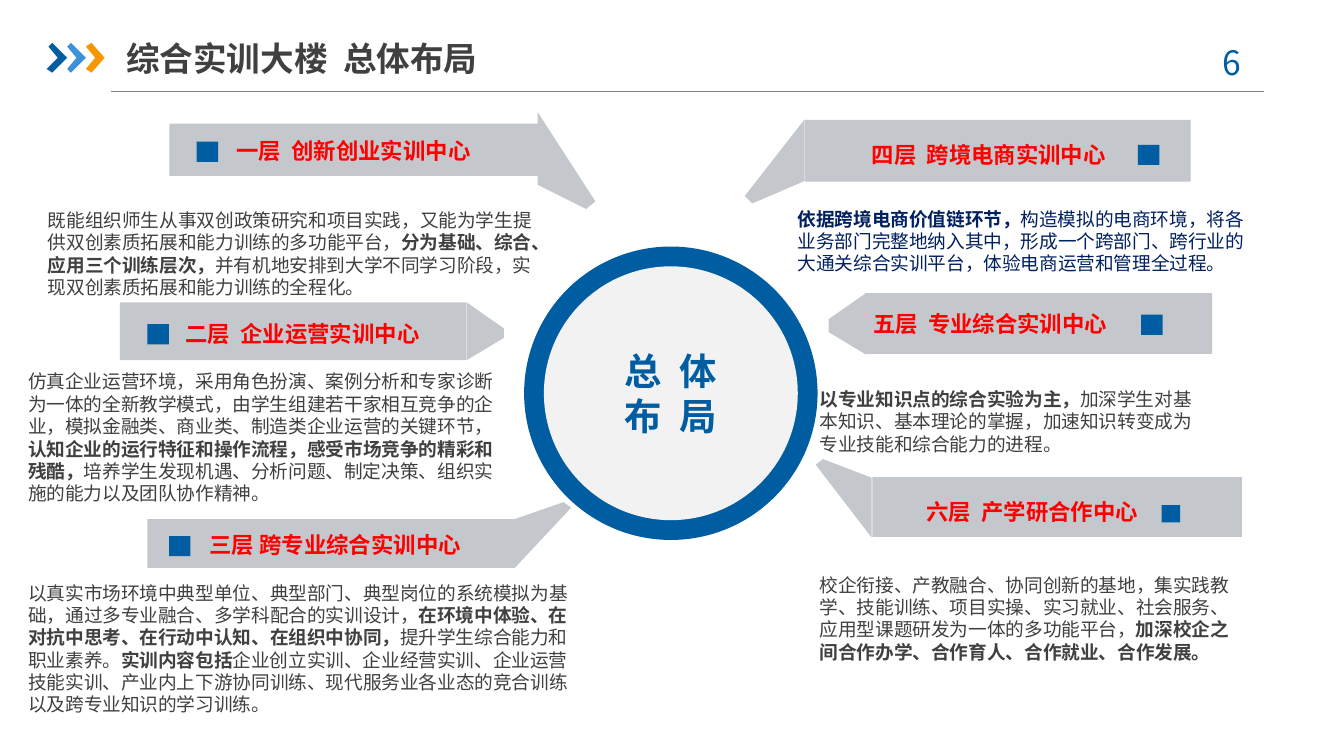
from lxml.etree import SubElement
from pptx import Presentation
from pptx.dml.color import RGBColor
from pptx.enum.shapes import MSO_CONNECTOR, MSO_SHAPE
from pptx.enum.text import MSO_ANCHOR, MSO_AUTO_SIZE, PP_ALIGN
from pptx.oxml.ns import qn
from pptx.util import Pt

FONT = "Noto Sans CJK SC"
COLORS = {
    "blue": "005DA2", "sky": "3992DB", "orange": "F79600", "rule": "808080",
    "banner": "C4C7CB", "disc": "F2F2F2", "text": "404040", "navy": "002060",
    "red": "FF0000",
}

LEFT_FLOORS = [
    dict(
        banner=(90.7, 66.2, 197.7, 28.1),
        tip=[(0, -6.5), (30.2, 42), (26, 45.4), (0, 32.4)],
        marker=(105.4, 75.9, 11.5), heading="一层  创新创业实训中心",
        heading_box=(126.7, 69.8, 154, 22.3), body_box=(25.7, 100.1, 260.6, 71.3),
        body=[("既能组织师生从事双创政策研究和项目实践，又能为学生提供双创素质拓展和能力训练的多功能平台，", False),
              ("分为基础、综合、应用三个训练层次，", True),
              ("并有机地安排到大学不同学习阶段，实现双创素质拓展和能力训练的全程化。", False)]),
    dict(
        banner=(64.2, 162, 185.7, 31),
        tip=[(0, 0), (20.2, 13.7), (20.2, 19.4), (0, 31)],
        marker=(79, 173.7, 11.5), heading="二层  企业运营实训中心",
        heading_box=(99.4, 167.8, 154, 22.3), body_box=(15.1, 198, 249.8, 72.7),
        body=[("仿真企业运营环境，采用角色扮演、案例分析和专家诊断为一体的全新教学模式，由学生组建若干家相互竞争的企业，"
               "模拟金融类、商业类、制造类企业运营的关键环节，", False),
              ("认知企业的运行特征和操作流程，感受市场竞争的精彩和残酷，", True),
              ("培养学生发现机遇、分析问题、制定决策、组织实施的能力以及团队协作精神。", False)]),
    dict(
        banner=(79, 278.1, 197, 26.2),
        tip=[(0, 26.2), (30.4, -5.9), (26.4, -8.8), (0, 0.4)],
        marker=(90.6, 287.2, 11.5), heading="三层 跨专业综合实训中心",
        heading_box=(112.3, 280.8, 160.6, 22.3), body_box=(15.1, 304.6, 291.6, 85.7),
        body=[("以真实市场环境中典型单位、典型部门、典型岗位的系统模拟为基础，通过多专业融合、多学科配合的实训设计，", False),
              ("在环境中体验、在对抗中思考、在行动中认知、在组织中协同，", True),
              ("提升学生综合能力和职业素养。", False),
              ("实训内容包括", True),
              ("企业创立实训、企业经营实训、企业运营技能实训、产业内上下游协同训练、"
               "现代服务业各业态的竞合训练以及跨专业知识的学习训练。", False)]),
]

RIGHT_FLOORS = [
    dict(
        banner=(431.3, 64.2, 206.6, 33.1),
        tip=[(0, 0), (-32.4, 41), (-28.1, 44.5), (0, 33.1)],
        marker=(609.6, 77.6, 11.5), heading="四层  跨境电商实训中心",
        heading_box=(438.5, 72, 154, 22.3), body_box=(427.3, 108.7, 244.1, 41),
        body_color="navy",
        body=[("依据跨境电商价值链环节，", True),
              ("构造模拟的电商环境，将各业务部门完整地纳入其中，形成一个跨部门、跨行业的大通关综合实训平台，"
               "体验电商运营和管理全过程。", False)]),
    dict(
        banner=(463.7, 157, 185.7, 32.6),
        tip=[(0, 0), (-20.2, 14.2), (-20.2, 20.7), (0, 32.6)],
        marker=(611.4, 168.6, 11.5), heading="五层  专业综合实训中心",
        heading_box=(439.2, 162.7, 154, 22.3), body_box=(439.2, 200.9, 206.6, 49.7),
        body=[("以专业知识点的综合实验为主，", True),
              ("加深学生对基本知识、基本理论的掌握，加速知识转变成为专业技能和综合能力的进程。", False)]),
    dict(
        banner=(467.3, 255.6, 198, 32),
        tip=[(0, 32), (-30.2, -6.5), (-26.6, -9.4), (0, 0.7)],
        marker=(622.3, 270.6, 10), heading="六层  产学研合作中心",
        heading_box=(445.7, 263.5, 164.1, 24.5), body_box=(439.2, 301, 221, 60.5),
        body=[("校企衔接、产教融合、协同创新的基地，集实践教学、技能训练、项目实操、实习就业、社会服务、"
               "应用型课题研发为一体的多功能平台，", False),
              ("加深校企之间合作办学、合作育人、合作就业、合作发展。", True)]),
]


def rgb(color):
    """Look up a palette colour."""
    return RGBColor.from_string(COLORS[color])


def paint(shape, color):
    """Give a shape a flat fill with no line or shadow."""
    shape.shadow.inherit = False
    shape.fill.solid()
    shape.fill.fore_color.rgb = rgb(color)
    shape.line.fill.background()
    return shape


def add_block(slide, preset, box, color):
    """Add a flat preset shape in a box of points."""
    return paint(slide.shapes.add_shape(preset, *map(Pt, box)), color)


def add_outline(slide, points, color):
    """Add a flat closed polygon through points."""
    builder = slide.shapes.build_freeform(*points[0], scale=Pt(1))
    builder.add_line_segments(points[1:], close=True)
    return paint(builder.convert_to_shape(), color)


def write(holder, *paragraphs, size, color, bold=False, align=PP_ALIGN.LEFT,
          anchor=MSO_ANCHOR.TOP, inset=0):
    """Write paragraphs, each a string or a list of (text, bold) runs."""
    frame = holder.text_frame
    frame.word_wrap = True
    frame.auto_size = MSO_AUTO_SIZE.NONE
    frame.vertical_anchor = anchor
    frame.margin_left = frame.margin_right = Pt(inset)
    frame.margin_top = frame.margin_bottom = Pt(3.6)
    for index, content in enumerate(paragraphs):
        paragraph = frame.add_paragraph() if index else frame.paragraphs[0]
        paragraph.alignment = align
        paragraph.line_spacing = Pt(size * 1.2)
        paragraph.space_before = Pt(0)
        runs = [(content, bold)] if isinstance(content, str) else content
        for text, strong in runs:
            run = paragraph.add_run()
            run.text = text
            run.font.size = Pt(size)
            run.font.bold = strong
            run.font.color.rgb = rgb(color)
            run.font.name = FONT
            SubElement(run.font._element, qn("a:ea"), typeface=FONT)


def add_text(slide, box, *paragraphs, **style):
    """Add a text box in a box of points."""
    write(slide.shapes.add_textbox(*map(Pt, box)), *paragraphs, **style)


def add_header(slide, left, top, width, height):
    """Place chevrons, title, page number and rule in the header box."""
    chevron = [(0.4, 2.2), (3, 0), (10.8, 8.2), (3, 16.4), (0, 13.8), (5.5, 8.2)]
    for index, color in enumerate(("blue", "sky", "orange")):
        x, y = left + index * 10.1, top + 7.2
        add_outline(slide, [(x + dx, y + dy) for dx, dy in chevron], color)
    title = slide.shapes.title
    title.left, title.top = Pt(left + 42.2), Pt(top)
    title.width, title.height = Pt(209), Pt(30.2)
    write(title, "综合实训大楼  总体布局", size=18, color="text", bold=True,
          anchor=MSO_ANCHOR.MIDDLE)
    add_text(slide, (left + width - 42, top + 2.9, 52.6, 28.8), "6 ", size=18,
             color="blue", align=PP_ALIGN.CENTER, inset=7.2)
    rule = slide.shapes.add_connector(
        MSO_CONNECTOR.STRAIGHT, Pt(left + 34.3), Pt(top + height),
        Pt(left + width), Pt(top + height))
    rule.line.color.rgb = rgb("rule")
    rule.line.width = Pt(0.75)
    SubElement(rule._element.spPr, qn("a:effectLst"))


def add_floor(slide, floor, points_right):
    """Place one floor's pointed banner, marker, heading and body."""
    left, top, width, height = floor["banner"]
    inner = left + width if points_right else left
    add_block(slide, MSO_SHAPE.RECTANGLE, floor["banner"], "banner")
    add_outline(slide, [(inner + dx, top + dy) for dx, dy in floor["tip"]], "banner")
    x, y, side = floor["marker"]
    add_block(slide, MSO_SHAPE.RECTANGLE, (x, y, side, side - 0.7), "blue")
    add_text(slide, floor["heading_box"], floor["heading"], size=12, color="red",
             bold=True, align=PP_ALIGN.LEFT if points_right else PP_ALIGN.RIGHT)
    add_text(slide, floor["body_box"], floor["body"], size=10,
             color=floor.get("body_color", "text"), anchor=MSO_ANCHOR.MIDDLE)


def add_hub(slide, left, top, size):
    """Place the ringed disc with its label in a square box."""
    ring = 10.6
    add_block(slide, MSO_SHAPE.OVAL, (left, top, size, size), "blue")
    inner = size - 2 * ring
    disc = add_block(slide, MSO_SHAPE.OVAL, (left + ring, top + ring, inner, inner), "disc")
    write(disc, "总  体", "布  局", size=20, color="blue", bold=True,
          align=PP_ALIGN.CENTER, anchor=MSO_ANCHOR.MIDDLE, inset=7.2)


def main():
    """Build and save the slide."""
    deck = Presentation()
    deck.slide_width, deck.slide_height = Pt(720), Pt(405)
    slide = deck.slides.add_slide(deck.slide_layouts[5])
    add_header(slide, 25.4, 15.8, 652, 33.2)
    for floors, points_right in ((LEFT_FLOORS, True), (RIGHT_FLOORS, False)):
        for floor in floors:
            add_floor(slide, floor, points_right)
    add_hub(slide, 280.8, 132.1, 157.2)
    deck.save("out.pptx")


if __name__ == "__main__":
    main()
